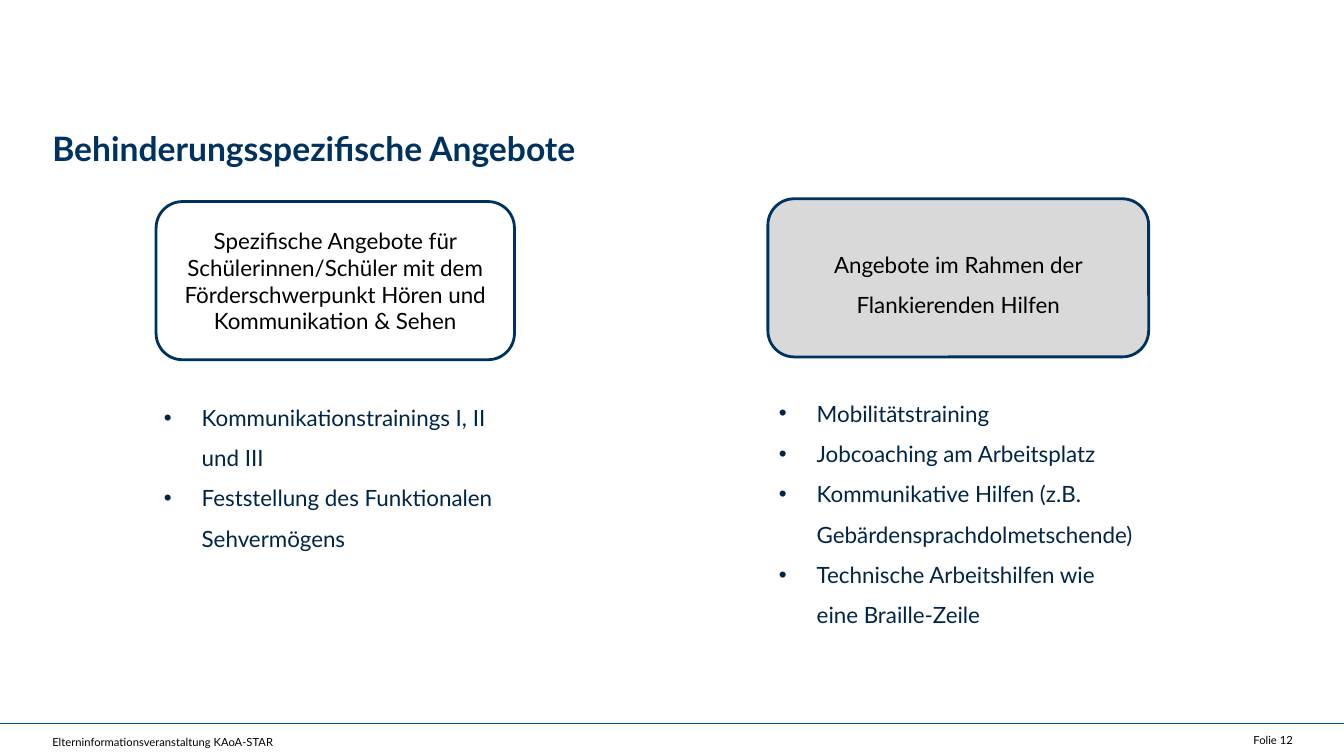
from pptx import Presentation
from pptx.dml.color import RGBColor as Rgb
from pptx.enum.shapes import MSO_CONNECTOR as Link, MSO_SHAPE as Form
from pptx.enum.text import MSO_ANCHOR as Anchor, MSO_AUTO_SIZE as Fit, PP_ALIGN as Align
from pptx.oxml.ns import qn
from pptx.util import Pt
from lxml.etree import SubElement as Sub

HUES = {"navy": "00325F", "ink": "002547", "blue": "00579D", "grey": "D9D9D9", "black": "000000"}
FONT = "Lato"


def hue(name):
    return Rgb.from_string(HUES[name])


def style(par, size, tone, bold=False):
    font = par.font
    font.name = FONT
    font.size = Pt(size)
    font.bold = bold
    font.color.rgb = hue(tone)


def pad(frame, gap):
    frame.margin_left = frame.margin_right = Pt(gap)
    frame.margin_top = frame.margin_bottom = Pt(gap)


def add_label(slide, area, text, size=8, tone="black", bold=False,
              align=Align.LEFT, anchor=Anchor.MIDDLE, space=None):
    frame = slide.shapes.add_textbox(*map(Pt, area)).text_frame
    frame.word_wrap = True
    frame.vertical_anchor = anchor
    pad(frame, 0)
    par = frame.paragraphs[0]
    par.text = text
    par.alignment = align
    par.line_spacing = space
    style(par, size, tone, bold)


def add_card(slide, area, text, fill=None, space=None):
    card = slide.shapes.add_shape(Form.ROUNDED_RECTANGLE, *map(Pt, area))
    card.shadow.inherit = False
    if fill:
        card.fill.solid()
        card.fill.fore_color.rgb = hue(fill)
    else:
        card.fill.background()
    card.line.color.rgb = hue("navy")
    card.line.width = Pt(2)
    frame = card.text_frame
    frame.word_wrap = True
    frame.vertical_anchor = Anchor.MIDDLE
    pad(frame, 3)
    par = frame.paragraphs[0]
    par.text = text
    par.alignment = Align.CENTER
    par.line_spacing = space
    style(par, 16, "black")


def add_list(slide, area, items):
    frame = slide.shapes.add_textbox(*map(Pt, area)).text_frame
    frame.word_wrap = True
    frame.auto_size = Fit.SHAPE_TO_FIT_TEXT
    for num, item in enumerate(items):
        par = frame.add_paragraph() if num else frame.paragraphs[0]
        par.text = item
        par.line_spacing = 1.5
        props = par._p.get_or_add_pPr()
        props.set("marL", str(Pt(27)))
        props.set("indent", str(Pt(-27)))
        Sub(props, qn("a:buFont")).set("typeface", "Arial")
        Sub(props, qn("a:buChar")).set("char", "•")
        style(par, 16, "ink")


def add_rule(slide, top, width):
    rule = slide.shapes.add_connector(Link.STRAIGHT, 0, Pt(top), Pt(width), Pt(top))
    rule.line.color.rgb = hue("blue")
    rule.line.width = Pt(0.57)
    Sub(rule._element.spPr, qn("a:effectLst"))


def main():
    deck = Presentation()
    deck.slide_width, deck.slide_height = Pt(960), Pt(540)
    slide = deck.slides.add_slide(deck.slide_layouts[6])

    add_rule(slide, 517, 960)
    add_label(slide, (37.4, 77, 886, 34), "Behinderungsspezifische Angebote",
              24, "navy", True, anchor=Anchor.TOP, space=1.5)
    add_card(slide, (111.5, 144, 256, 113),
             "Spezifische Angebote für Schülerinnen/Schüler mit dem "
             "Förderschwerpunkt Hören und Kommunikation & Sehen")
    add_card(slide, (548.5, 142, 272, 113),
             "Angebote im Rahmen der Flankierenden Hilfen", "grey", 1.5)
    add_list(slide, (110, 275.5, 263.5, 124), [
        "Kommunikationstrainings I, II und III",
        "Feststellung des Funktionalen Sehvermögens",
    ])
    add_list(slide, (549.3, 272.5, 273, 181.5), [
        "Mobilitätstraining",
        "Jobcoaching am Arbeitsplatz",
        "Kommunikative Hilfen (z.B. Gebärdensprachdolmetschende)",
        "Technische Arbeitshilfen wie eine Braille-Zeile",
    ])
    add_label(slide, (37.4, 517, 585, 23), "Elterninformationsveranstaltung KAoA-STAR",
              space=Pt(12))
    add_label(slide, (684.5, 517, 239, 23), "Folie 12", align=Align.RIGHT)

    deck.save("out.pptx")


if __name__ == "__main__":
    main()
